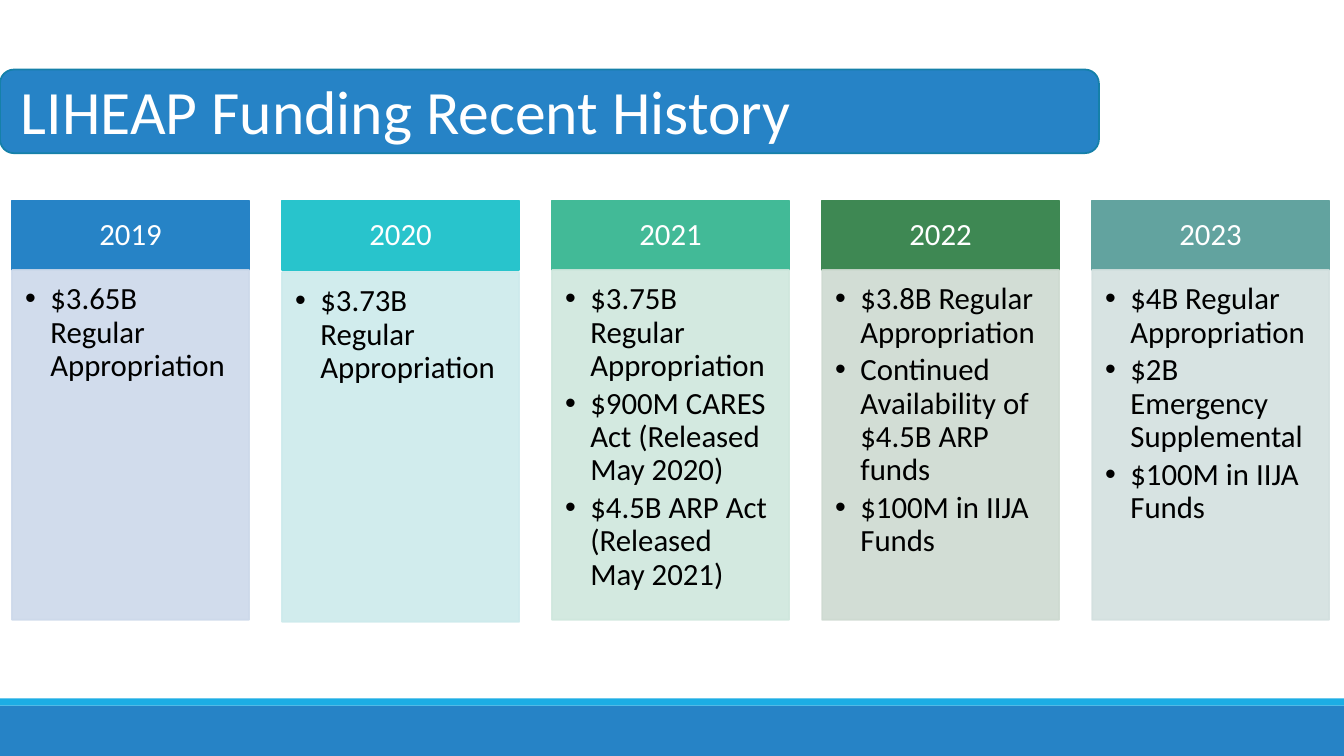
from dataclasses import dataclass

from lxml.etree import SubElement
from pptx import Presentation
from pptx.dml.color import RGBColor
from pptx.enum.shapes import MSO_SHAPE as Kind
from pptx.enum.text import MSO_ANCHOR as Anchor, PP_ALIGN as Align
from pptx.oxml.ns import qn
from pptx.shapes.autoshape import Shape
from pptx.slide import Slide
from pptx.util import Inches, Pt

WHITE = RGBColor(0xFF, 0xFF, 0xFF)
BLACK = RGBColor(0x00, 0x00, 0x00)
BLUE = RGBColor(0x26, 0x83, 0xC6)
SKY = RGBColor(0x1C, 0xAD, 0xE4)
EDGE = RGBColor(0x15, 0x80, 0xA9)
TEAL = RGBColor(0x28, 0xC4, 0xCC)
MINT = RGBColor(0x42, 0xBA, 0x97)
GREEN = RGBColor(0x3E, 0x88, 0x53)
SAGE = RGBColor(0x62, 0xA3, 0x9F)
PALE_BLUE = RGBColor(0xCD, 0xD9, 0xEA)
PALE_TEAL = RGBColor(0xCD, 0xEA, 0xEC)
PALE_MINT = RGBColor(0xCF, 0xE7, 0xDD)
PALE_GREEN = RGBColor(0xCE, 0xDA, 0xD1)
PALE_SAGE = RGBColor(0xD3, 0xE0, 0xDF)

LEFT, STEP, WIDTH = 0.12, 2.678, 2.35
TOP, HEAD, BODY = 1.99, 0.69, 3.47


@dataclass
class Year:
    name: str
    color: RGBColor
    pale: RGBColor
    funds: list[str]
    drop: float = 0.0


YEARS = [
    Year("2019", BLUE, PALE_BLUE, ["$3.65B Regular Appropriation"]),
    Year("2020", TEAL, PALE_TEAL, ["$3.73B Regular Appropriation"], drop=0.02),
    Year("2021", MINT, PALE_MINT, [
        "$3.75B Regular Appropriation",
        "$900M CARES Act (Released May 2020)",
        "$4.5B ARP Act (Released May 2021)",
    ]),
    Year("2022", GREEN, PALE_GREEN, [
        "$3.8B Regular Appropriation",
        "Continued Availability of $4.5B ARP funds",
        "$100M in IIJA Funds",
    ]),
    Year("2023", SAGE, PALE_SAGE, [
        "$4B Regular Appropriation",
        "$2B Emergency Supplemental",
        "$100M in IIJA Funds",
    ]),
]


def add_box(slide: Slide, x: float, y: float, w: float, h: float, fill: RGBColor,
            edge: RGBColor | None = None, kind: Kind = Kind.RECTANGLE) -> Shape:
    box = slide.shapes.add_shape(kind, Inches(x), Inches(y), Inches(w), Inches(h))
    box.shadow.inherit = False
    box.fill.solid()
    box.fill.fore_color.rgb = fill
    if edge is None:
        box.line.fill.background()
    else:
        box.line.color.rgb = edge
        box.line.width = Pt(1.25)
    return box


def fade(box: Shape, percent: int) -> None:
    """Set the opacity of a box's fill and line."""
    for color in box._element.spPr.iter(qn("a:srgbClr")):
        SubElement(color, qn("a:alpha"), val=str(percent * 1000))


def write(box: Shape, lines: list[str], *, size: float = 22, color: RGBColor = BLACK,
          align: Align = Align.LEFT, anchor: Anchor = Anchor.TOP,
          inset: tuple[float, float, float, float] = (0.1, 0.05, 0.1, 0.05),
          spacing: float = 1.0, after: float = 0, bullet: bool = False) -> None:
    frame = box.text_frame
    frame.word_wrap = True
    frame.vertical_anchor = anchor
    (frame.margin_left, frame.margin_top,
     frame.margin_right, frame.margin_bottom) = map(Inches, inset)
    for i, line in enumerate(lines):
        para = frame.add_paragraph() if i else frame.paragraphs[0]
        para.alignment = align
        para.line_spacing = spacing
        para.space_after = Pt(after)
        if bullet:
            para.level = 1
            props = para._p.get_or_add_pPr()
            props.set("marL", str(Inches(0.25)))
            props.set("indent", str(Inches(-0.25)))
            SubElement(props, qn("a:buFont"), typeface="Arial")
            SubElement(props, qn("a:buChar"), char="•")
        run = para.add_run()
        run.text = line
        run.font.name = "Calibri"
        run.font.size = Pt(size)
        run.font.color.rgb = color


def add_year(slide: Slide, x: float, year: Year) -> None:
    head = add_box(slide, x, TOP, WIDTH, HEAD, year.color, year.color)
    write(head, [year.name], color=WHITE, align=Align.CENTER, anchor=Anchor.MIDDLE,
          inset=(0.17, 0.1, 0.17, 0.1), spacing=0.9)
    body = add_box(slide, x, TOP + HEAD + year.drop, WIDTH, BODY, year.pale, year.pale)
    fade(body, 90)
    write(body, year.funds, inset=(0.13, 0.13, 0.17, 0.19), spacing=0.9,
          after=3.3, bullet=True)


def main() -> None:
    deck = Presentation()
    deck.slide_width, deck.slide_height = Inches(13.33), Inches(7.5)
    slide = deck.slides.add_slide(deck.slide_layouts[6])
    add_box(slide, 0, 7, 13.33, 0.5, BLUE)
    add_box(slide, 0, 6.93, 13.33, 0.07, SKY)
    add_box(slide, 0, 0.69, 10.9, 0.83, BLUE, EDGE, Kind.ROUNDED_RECTANGLE)
    title = slide.shapes.add_textbox(Inches(0.11), Inches(0.67), Inches(9.73), Inches(0.84))
    write(title, ["LIHEAP Funding Recent History"], size=44, color=WHITE)
    for i, year in enumerate(YEARS):
        add_year(slide, LEFT + i * STEP, year)
    deck.save("out.pptx")


if __name__ == "__main__":
    main()
